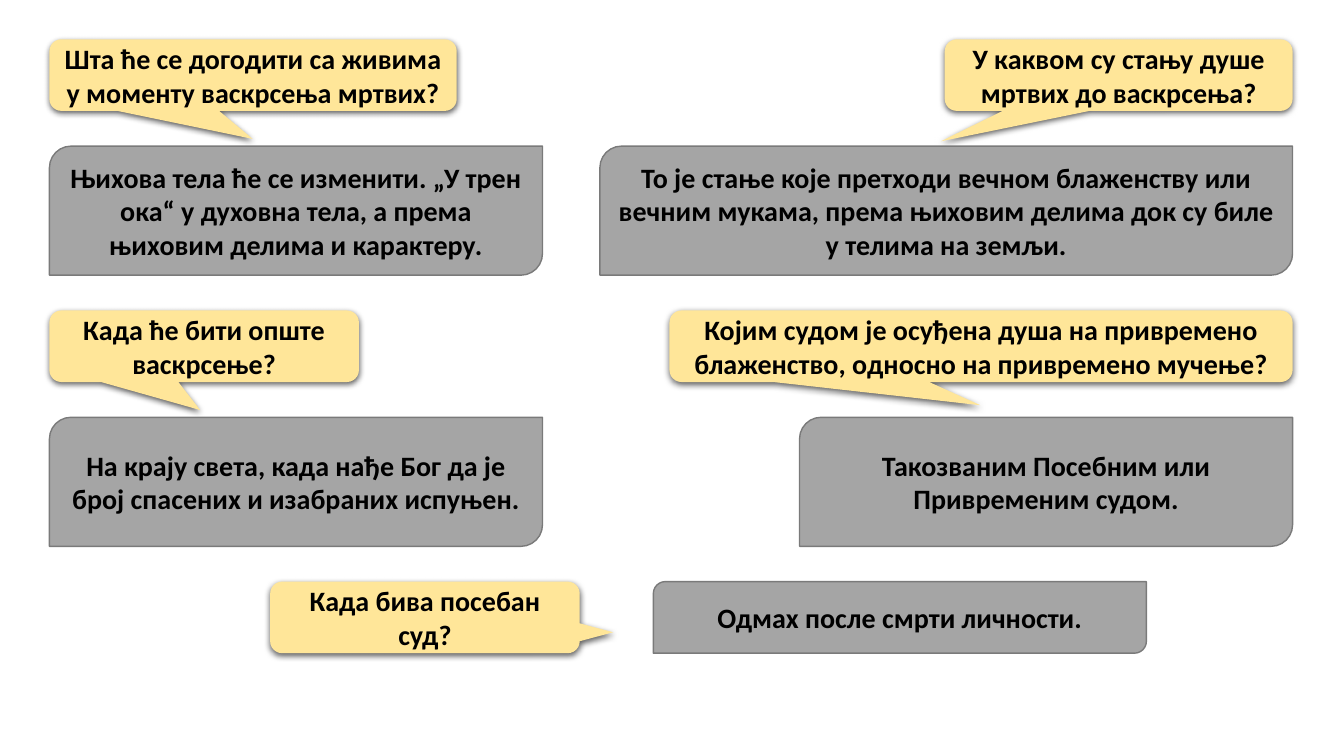
from lxml import etree
from pptx import Presentation
from pptx.dml.color import RGBColor
from pptx.enum.shapes import MSO_SHAPE
from pptx.enum.text import MSO_ANCHOR, PP_ALIGN
from pptx.oxml.ns import qn
from pptx.util import Inches, Pt

YELLOW = RGBColor(0xFF, 0xE6, 0x99)
GRAY = RGBColor(0xA5, 0xA5, 0xA5)
DARK_GRAY = RGBColor(0x7A, 0x7A, 0x7A)
BLACK = RGBColor(0x00, 0x00, 0x00)

LEFT, RIGHT = 0.49, 12.82
TOP, ROW_STEP = 0.39, 2.69
QUESTION_H, ANSWER_H, ANSWER_W = 0.71, 1.28, 4.89
ANSWER_DROP = 1.06

PAIRS = [
    (0, False, 4.04, (-0.001, 0.892), ANSWER_W,
     "Шта ће се догодити са живима у моменту васкрсења мртвих?",
     "Њихова тела ће се изменити. „У трен ока“ у духовна тела, а према њиховим делима и карактеру."),
    (0, True, 3.45, (-0.511, 0.925), 6.87,
     "У каквом су стању душе мртвих до васкрсења?",
     "То је стање које претходи вечном блаженству или вечним мукама, "
     "према њиховим делима док су биле у телима на земљи."),
    (1, False, 3.07, (-0.013, 0.892), ANSWER_W,
     "Када ће бити опште васкрсење?",
     "На крају света, када нађе Бог да је број спасених и изабраних испуњен."),
    (1, True, 6.18, (-0.001, 0.825), ANSWER_W,
     "Којим судом је осуђена душа на привремено блаженство, односно на привремено мучење?",
     "Такозваним Посебним или Привременим судом."),
]


def add_box(slide, kind, x, y, w, h, fill, text):
    sp = slide.shapes.add_shape(kind, Inches(x), Inches(y), Inches(w), Inches(h))
    sp.shadow.inherit = False
    sp.fill.solid()
    sp.fill.fore_color.rgb = fill
    tf = sp.text_frame
    tf.word_wrap = True
    tf.vertical_anchor = MSO_ANCHOR.MIDDLE
    tf.text = text
    p = tf.paragraphs[0]
    p.alignment = PP_ALIGN.CENTER
    font = p.runs[0].font
    font.name = "Calibri"
    font.size = Pt(20)
    font.bold = True
    font.color.rgb = BLACK
    return sp


def add_shadow(sp):
    effects = sp._element.spPr.find(qn("a:effectLst"))
    shadow = etree.SubElement(effects, qn("a:outerShdw"), blurRad=str(Pt(4.5)),
                              dist=str(Pt(1.5)), dir="5400000",
                              algn="ctr", rotWithShape="0")
    color = etree.SubElement(shadow, qn("a:srgbClr"), val=str(BLACK))
    etree.SubElement(color, qn("a:alpha"), val="63000")


def add_question(slide, x, y, w, tip, text):
    sp = add_box(slide, MSO_SHAPE.ROUNDED_RECTANGULAR_CALLOUT,
                 x, y, w, QUESTION_H, YELLOW, text)
    sp.adjustments[0], sp.adjustments[1] = tip
    sp.line.fill.background()
    add_shadow(sp)


def add_answer(slide, x, y, w, h, text):
    sp = add_box(slide, MSO_SHAPE.ROUND_2_DIAG_RECTANGLE, x, y, w, h, GRAY, text)
    sp.line.color.rgb = DARK_GRAY
    sp.line.width = Pt(1)


def add_stacked_pair(slide, row, on_right, question_w, tip, answer_w, question, answer):
    y = TOP + row * ROW_STEP
    question_x = RIGHT - question_w if on_right else LEFT
    answer_x = RIGHT - answer_w if on_right else LEFT
    add_question(slide, question_x, y, question_w, tip, question)
    add_answer(slide, answer_x, y + ANSWER_DROP, answer_w, ANSWER_H, answer)


def add_side_pair(slide, x, y, question_w, gap, tip, question, answer):
    add_question(slide, x, y, question_w, tip, question)
    add_answer(slide, x + question_w + gap, y, ANSWER_W, QUESTION_H, answer)


def main():
    prs = Presentation()
    prs.slide_width, prs.slide_height = Inches(13.33), Inches(7.5)
    slide = prs.slides.add_slide(prs.slide_layouts[6])
    for pair in PAIRS:
        add_stacked_pair(slide, *pair)
    add_side_pair(slide, 2.68, TOP + 2 * ROW_STEP, 3.07, 0.73, (0.608, 0.208),
                  "Када бива посебан суд?", "Одмах после смрти личности.")
    prs.save("out.pptx")


if __name__ == "__main__":
    main()
